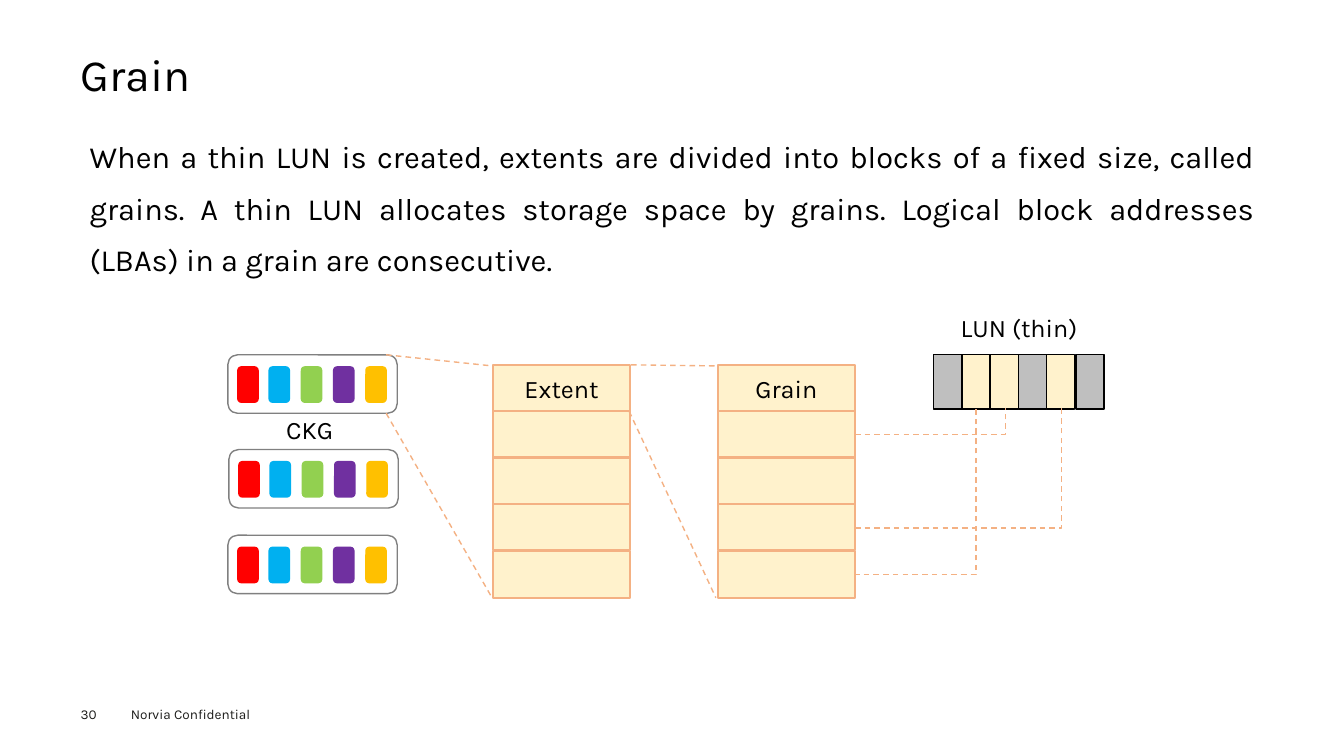
from lxml.etree import SubElement
from pptx import Presentation
from pptx.dml.color import RGBColor
from pptx.enum.dml import MSO_LINE
from pptx.enum.shapes import MSO_CONNECTOR, MSO_SHAPE
from pptx.enum.text import MSO_ANCHOR, PP_ALIGN
from pptx.oxml.ns import qn
from pptx.util import Pt

PX = 9144  # 100 px to the inch
FONT = "Karla"
BLACK = RGBColor(0x00, 0x00, 0x00)
FOOTER_INK = RGBColor(0x1D, 0x1D, 0x1B)
WHITE = RGBColor(0xFF, 0xFF, 0xFF)
FRAME_GREY = RGBColor(0x80, 0x80, 0x80)
CELL_GREY = RGBColor(0xBF, 0xBF, 0xBF)
CREAM = RGBColor(0xFF, 0xF2, 0xCC)
ORANGE = RGBColor(0xF4, 0xB1, 0x83)
CHUNK_COLORS = [
    RGBColor(0xFF, 0x00, 0x00),
    RGBColor(0x00, 0xB0, 0xF0),
    RGBColor(0x92, 0xD0, 0x50),
    RGBColor(0x70, 0x30, 0xA0),
    RGBColor(0xFF, 0xC0, 0x00),
]

deck = Presentation()
deck.slide_width, deck.slide_height = 1333 * PX, 750 * PX
page = deck.slides.add_slide(deck.slide_layouts[6])


def add_block(kind, left, top, width, height, fill, line, weight):
    block = page.shapes.add_shape(kind, left * PX, top * PX, width * PX, height * PX)
    block.shadow.inherit = False
    block.fill.solid()
    block.fill.fore_color.rgb = fill
    block.line.color.rgb = line
    block.line.width = Pt(weight)
    return block


def add_words(box, words, size, color=BLACK, align=PP_ALIGN.LEFT):
    box.text_frame.word_wrap = True
    para = box.text_frame.paragraphs[0]
    para.alignment = align
    span = para.add_run()
    span.text = words
    span.font.name = FONT
    span.font.size = Pt(size)
    span.font.color.rgb = color
    return para


# Title, body, footer and diagram labels: place, insets, words, size, colour,
# alignment, line spacing, anchor
LEFT, JUSTIFY = PP_ALIGN.LEFT, PP_ALIGN.JUSTIFY
TOP, MIDDLE = MSO_ANCHOR.TOP, MSO_ANCHOR.MIDDLE
BODY = (
    "When a thin LUN is created, extents are divided into blocks of a fixed size, "
    "called grains. A thin LUN allocates storage space by grains. "
    "Logical block addresses (LBAs) in a grain are consecutive."
)
texts = [
    ((120, 695, 160, 27), (10, 5), "Norvia Confidential", 9.7, FOOTER_INK, LEFT, 1.0, TOP),
    ((80, 700, 55, 16), (0, 0), "30", 9.7, FOOTER_INK, LEFT, 1.0, TOP),
    ((80, 49, 1173, 54), (0, 0), "Grain", 32, BLACK, LEFT, 0.9, MIDDLE),
    ((80, 118, 1173, 530), (9, 4), BODY, 22, BLACK, JUSTIFY, 1.4, TOP),
    ((274, 406, 69, 40), (10, 5), "CKG", 18, BLACK, LEFT, 1.0, TOP),
    ((943, 305, 164, 40), (10, 5), "LUN (thin)", 18, BLACK, LEFT, 1.0, TOP),
]
for place, (inset_x, inset_y), words, size, color, align, spacing, anchor in texts:
    box = page.shapes.add_textbox(*[length * PX for length in place])
    frame = box.text_frame
    frame.margin_left = frame.margin_right = inset_x * PX
    frame.margin_top = frame.margin_bottom = inset_y * PX
    frame.vertical_anchor = anchor
    add_words(box, words, size, color, align).line_spacing = spacing

# Three chunk groups, each holding five chunks
for left, top in [(226, 352), (227, 446), (226, 531)]:
    add_block(MSO_SHAPE.ROUNDED_RECTANGLE, left, top, 168, 58, WHITE, FRAME_GREY, 1)
    for column, color in enumerate(CHUNK_COLORS):
        add_block(MSO_SHAPE.ROUNDED_RECTANGLE, left + 10 + column * 127 // 4, top + 12,
                  20, 35, color, color, 1)

# Extent and grain stacks
for left, name in [(489, "Extent"), (712, "Grain")]:
    for row in range(5):
        block = add_block(MSO_SHAPE.RECTANGLE, left, 362 + row * 185 // 4, 136, 46,
                          CREAM, ORANGE, 1.5)
        if row == 0:
            block.text_frame.vertical_anchor = MSO_ANCHOR.MIDDLE
            add_words(block, name, 18, align=PP_ALIGN.CENTER)

# Thin LUN cells
for column, fill in enumerate([CELL_GREY, CREAM, CREAM, CELL_GREY, CREAM, CELL_GREY]):
    add_block(MSO_SHAPE.RECTANGLE, 926 + column * 141 // 5, 352, 28, 54, fill, BLACK, 1)

# Dashed zoom lines, then bent links from grains to LUN cells
STRAIGHT, ELBOW = MSO_CONNECTOR.STRAIGHT, MSO_CONNECTOR.ELBOW
links = [
    (STRAIGHT, 383, 352, 488, 363),
    (STRAIGHT, 383, 410, 488, 593),
    (STRAIGHT, 626, 362, 711, 363),
    (STRAIGHT, 624, 408, 710, 593),
    (ELBOW, 848, 431, 997, 405),
    (ELBOW, 847, 570, 968, 405),
    (ELBOW, 848, 524, 1053, 405),
]
for kind, *ends in links:
    link = page.shapes.add_connector(kind, *[length * PX for length in ends])
    link.line.color.rgb = ORANGE
    link.line.width = Pt(1)
    link.line.dash_style = MSO_LINE.DASH
    properties = link._element.spPr
    SubElement(properties, qn("a:effectLst"))
    if kind == ELBOW:  # a single corner
        properties.find(qn("a:prstGeom")).set("prst", "bentConnector2")

deck.save("out.pptx")
